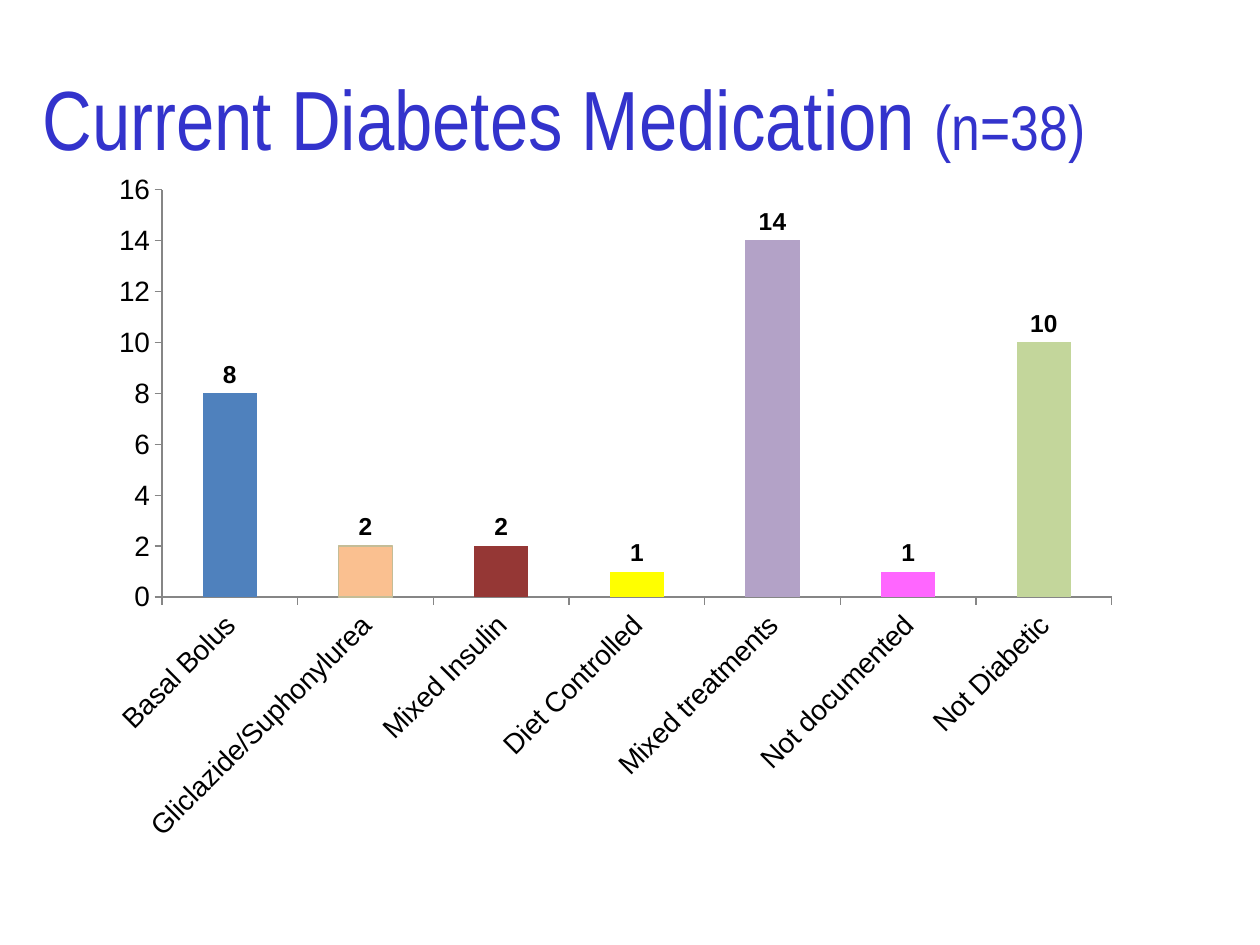
from lxml import etree
from pptx import Presentation
from pptx.chart.data import CategoryChartData as ChartData
from pptx.dml.color import RGBColor
from pptx.enum.chart import XL_CHART_TYPE as Kind, XL_LABEL_POSITION as Pos, XL_TICK_MARK as Tick
from pptx.enum.text import MSO_ANCHOR as Anchor
from pptx.oxml.ns import qn
from pptx.util import Inches, Pt

BARS = [
    ("Basal Bolus", 8, "4F81BD"),
    ("Gliclazide/Suphonylurea", 2, "FAC090"),
    ("Mixed Insulin", 2, "953735"),
    ("Diet Controlled", 1, "FFFF00"),
    ("Mixed treatments", 14, "B3A2C7"),
    ("Not documented", 1, "FF66FF"),
    ("Not Diabetic", 10, "C3D69B"),
]


def color(code):
    return RGBColor.from_string(code)


def set_font(font, name, size, code, bold=False):
    font.name = name
    font.size = Pt(size)
    font.bold = bold
    font.color.rgb = color(code)


def add_title(slide, box):
    frame = slide.shapes.add_textbox(*map(Inches, box)).text_frame
    frame.word_wrap = True
    frame.vertical_anchor = Anchor.BOTTOM
    para = frame.paragraphs[0]
    for text, size in (("Current Diabetes Medication ", 48), ("(n=38)", 36)):
        run = para.add_run()
        run.text = text
        set_font(run.font, "Arial Narrow", size, "3333CC")


def style_axis(axis):
    axis.has_major_gridlines = False
    axis.major_tick_mark = Tick.OUTSIDE
    axis.minor_tick_mark = Tick.NONE
    set_font(axis.tick_labels.font, "Arial", 16, "000000")
    axis.format.line.color.rgb = color("868686")
    axis.format.line.width = Pt(0.75)


def set_plot_box(chart, box):
    area = chart.plots[0]._element.getparent()
    for old in area.findall(qn("c:layout")):
        area.remove(old)
    layout = etree.Element(qn("c:layout"))
    area.insert(0, layout)
    manual = etree.SubElement(layout, qn("c:manualLayout"))
    parts = [("layoutTarget", "inner"), ("xMode", "edge"), ("yMode", "edge")]
    parts += [(tag, percent / 100) for tag, percent in zip("xywh", box)]
    for tag, val in parts:
        etree.SubElement(manual, qn("c:" + tag)).set("val", str(val))


def add_bars(slide, box):
    names, counts, fills = zip(*BARS)
    data = ChartData()
    data.categories = names
    data.add_series("Series 1", counts)
    chart = slide.shapes.add_chart(Kind.COLUMN_CLUSTERED, *map(Inches, box), data).chart
    chart.has_legend = False
    chart.has_title = False
    set_font(chart.font, "Calibri", 10, "000000")
    style_axis(chart.category_axis)
    style_axis(chart.value_axis)
    body = chart.category_axis._element.find(qn("c:txPr")).find(qn("a:bodyPr"))
    body.set("rot", "-2700000")
    scale = chart.value_axis
    scale.minimum_scale, scale.maximum_scale, scale.major_unit = 0, 16, 2
    set_plot_box(chart, (5.8, 2.8, 91.7, 58.6))

    plot = chart.plots[0]
    plot.gap_width = 150
    plot.vary_by_categories = False
    series = plot.series[0]
    series.format.fill.solid()
    series.format.fill.fore_color.rgb = color(fills[0])
    for i, code in enumerate(fills[1:], 1):
        fill = series.points[i].format.fill
        fill.solid()
        fill.fore_color.rgb = color(code)
    edge = series.points[1].format.line
    edge.color.rgb = color("C4BD97")
    edge.width = Pt(0.75)
    labels = series.data_labels
    labels.show_value = True
    labels.position = Pos.OUTSIDE_END
    set_font(labels.font, "Arial", 14, "000000", True)


def main():
    deck = Presentation()
    deck.slide_width, deck.slide_height = Inches(10), Inches(7.5)
    slide = deck.slides.add_slide(deck.slide_layouts[6])
    add_title(slide, (0.24, 0.44, 9.6, 0.94))
    add_bars(slide, (0.81, 1.35, 8.22, 5.52))
    deck.save("out.pptx")


if __name__ == "__main__":
    main()
